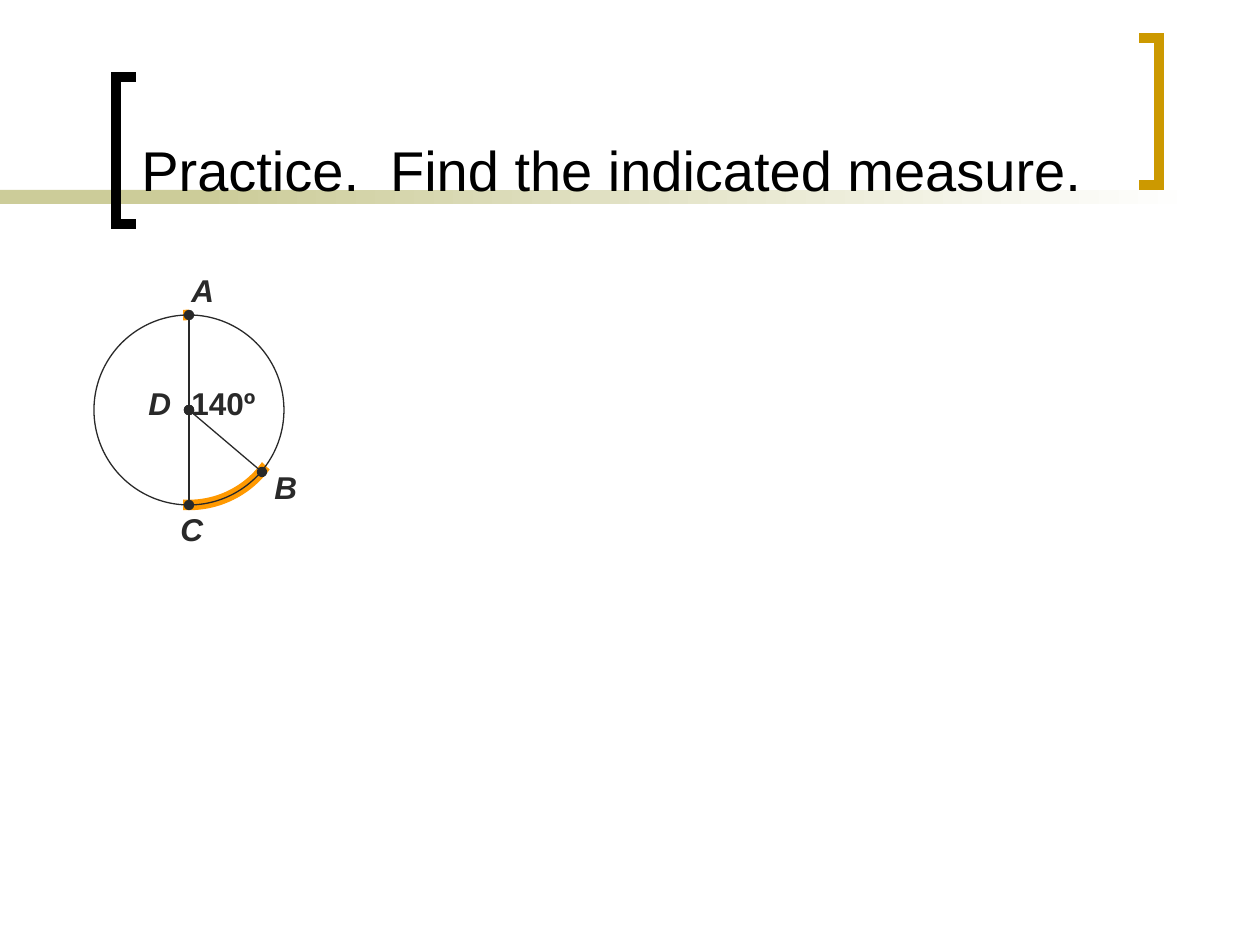
"""Build a geometry practice slide about circle arcs."""
import pptx
import pptx.dml.color
import pptx.enum.shapes
import pptx.enum.text
import pptx.oxml
import pptx.oxml.ns
import pptx.util

PX = 914400 / 126
HUES = {"ink": "292929", "black": "000000", "white": "FFFFFF",
        "sand": "CCCC99", "gold": "CC9900", "arc": "FF9900"}
KINDS = pptx.enum.shapes.MSO_SHAPE
ANCHOR = pptx.enum.text.MSO_ANCHOR


def px(num):
    """Turn pixels into EMU."""
    return pptx.util.Emu(round(num * PX))


def hue(name):
    """Return the named colour."""
    return pptx.dml.color.RGBColor.from_string(HUES[name])


def paint(shape, fill=None, line=None, width=0.75):
    """Set the fill and line of a shape."""
    shape.shadow.inherit = False
    if fill:
        shape.fill.solid()
        shape.fill.fore_color.rgb = hue(fill)
    else:
        shape.fill.background()
    if line:
        shape.line.color.rgb = hue(line)
        shape.line.width = pptx.util.Pt(width)
    else:
        shape.line.fill.background()


def add_tag(parent, tag, **attrs):
    """Append a DrawingML element to a parent."""
    node = pptx.oxml.parse_xml(f"<{tag} {pptx.oxml.ns.nsdecls('a')}/>")
    for key, val in attrs.items():
        node.set(key, val)
    parent.append(node)


def add_form(slide, kind, box, **style):
    """Add a preset shape."""
    shape = slide.shapes.add_shape(kind, *map(px, box))
    paint(shape, **style)
    return shape


def add_fade(slide, box, hues):
    """Add a bar that fades from left to right."""
    bar = add_form(slide, KINDS.RECTANGLE, box)
    bar.fill.gradient()
    bar.fill.gradient_angle = 0
    for stop, name, place in zip(bar.fill.gradient_stops, hues, (0, 1)):
        stop.color.rgb = hue(name)
        stop.position = place


def add_path(slide, points, close=False, **style):
    """Add a freeform through the points."""
    pen = slide.shapes.build_freeform(*points[0], scale=PX)
    pen.add_line_segments(points[1:], close=close)
    shape = pen.convert_to_shape()
    paint(shape, **style)
    return shape


def add_brace(slide, back, tip, top, name):
    """Add a square bracket with its back and tips at the given x."""
    low = top + 147
    shape = add_path(slide, [(tip, top), (back, top), (back, low), (tip, low)],
                     line=name, width=6)
    add_tag(shape.line._get_or_add_ln(), "a:miter", lim="800000")


def add_ray(slide, start, end):
    """Add a line with a dot at each end."""
    kind = pptx.enum.shapes.MSO_CONNECTOR.STRAIGHT
    ray = slide.shapes.add_connector(kind, *map(px, start + end))
    ray.line.color.rgb = hue("ink")
    ray.line.width = pptx.util.Pt(0.75)
    for tag in ("a:headEnd", "a:tailEnd"):
        add_tag(ray.line._get_or_add_ln(), tag, type="oval")
    add_tag(ray._element.spPr, "a:effectLst")


def add_text(slide, text, box, name="ink", anchor=ANCHOR.TOP, **style):
    """Add a text box with one run."""
    frame = slide.shapes.add_textbox(*map(px, box)).text_frame
    frame.word_wrap = True
    frame.vertical_anchor = anchor
    run = frame.paragraphs[0].add_run()
    run.text = text
    form = {"name": "Arial", "size": pptx.util.Pt(18), "bold": True} | style
    for key, val in form.items():
        setattr(run.font, key, val)
    run.font.color.rgb = hue(name)


def add_frame(slide):
    """Add the bar and brackets around the title."""
    add_form(slide, KINDS.RECTANGLE, (0, 190, 294, 14), fill="sand")
    add_fade(slide, (199, 190, 998, 14), ("sand", "white"))
    add_brace(slide, 116, 136, 77, "black")
    add_brace(slide, 1159, 1139, 38, "gold")


def add_arc(slide, ring):
    """Add the thick arc from C to B by masking the rest of its ring."""
    add_form(slide, KINDS.OVAL, ring, line="arc", width=6)
    add_form(slide, KINDS.RECTANGLE, (73, 294, 110, 284), fill="white")
    add_path(slide, [(189, 284), (189, 346), (242, 378), (262, 441), (262, 462),
                     (284, 483), (305, 368), (252, 305)],
             close=True, fill="white")


def main():
    """Build and save the slide."""
    deck = pptx.Presentation()
    deck.slide_width, deck.slide_height = px(1260), px(945)
    slide = deck.slides.add_slide(deck.slide_layouts[6])
    mid, rad = (189, 410), 95
    ring = (mid[0] - rad, mid[1] - rad, 2 * rad, 2 * rad)
    add_frame(slide)
    add_arc(slide, ring)
    add_text(slide, "Practice.  Find the indicated measure.", (129, 14, 987, 195),
             "black", ANCHOR.BOTTOM, size=pptx.util.Pt(32), bold=False)
    add_form(slide, KINDS.OVAL, ring, line="ink")
    for end in ((mid[0], mid[1] - rad), (mid[0], mid[1] + rad), (262, 472)):
        add_ray(slide, mid, end)
    for text, left, top in (("A", 179, 265), ("B", 262, 462),
                            ("C", 168, 504), ("D", 136, 378)):
        add_text(slide, text, (left, top, 73, 50), italic=True)
    add_text(slide, "140º", (179, 378, 95, 50))
    deck.save("out.pptx")


if __name__ == "__main__":
    main()
